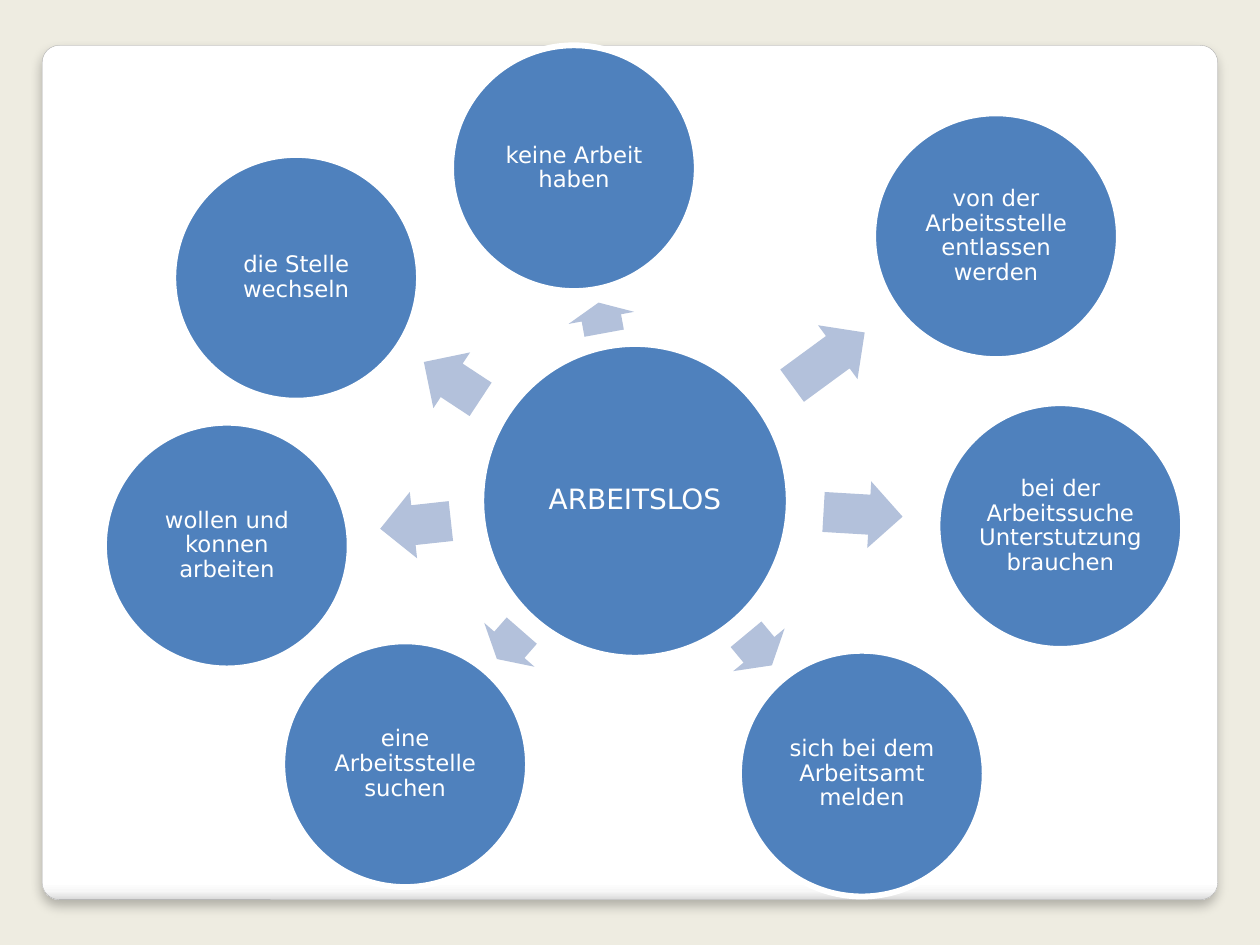
"""Build a slide with a hub circle and seven radiating idea circles."""
from dataclasses import dataclass
from math import atan2, cos, degrees, hypot, sin

from lxml import etree
from pptx import Presentation
from pptx.dml.color import RGBColor
from pptx.enum.shapes import MSO_SHAPE
from pptx.enum.text import MSO_ANCHOR, PP_ALIGN
from pptx.oxml.ns import qn
from pptx.util import Inches, Pt

CIRCLE, ARROW, CARD = MSO_SHAPE.OVAL, MSO_SHAPE.RIGHT_ARROW, MSO_SHAPE.ROUNDED_RECTANGLE
MIDDLE, CENTER = MSO_ANCHOR.MIDDLE, PP_ALIGN.CENTER
WIDTH, HEIGHT = Inches(10), Inches(7.5)
COLUMNS, ROWS = 100, 75
BLANK = 6


@dataclass(frozen=True)
class Theme:
    """Colours, type sizes and line widths of the slide."""
    page: str = "EEECE1"
    circle: str = "4F81BD"
    arrow: str = "B3C1DB"
    white: str = "FFFFFF"
    card_line: str = "A4A4A4"
    shadow: str = "000000"
    card_stops: tuple = ((0, "FFFFFF"), (98, "FFFFFF"), (99, "F7F7F7"), (100, "DADADA"))
    font: str = "DejaVu Sans"
    hub_size: float = 16
    idea_size: float = 13
    ring: float = 3.35
    card_ring: float = 0.16


THEME = Theme()
HUB = (50.4, 39.75)
HUB_SIZE = (24.4, 24.9)
IDEA_SIZE = (19.5, 19.5)
ARROW_WIDTH = 5.3
ARROW_SHARE = 0.53
IDEAS = (
    ("keine Arbeit haben", (45.55, 13.35)),
    ("von der Arbeitsstelle entlassen werden", (79.05, 18.75)),
    ("bei der Arbeitssuche Unterstutzung brauchen", (84.15, 41.75)),
    ("sich bei dem Arbeitsamt melden", (68.4, 61.4)),
    ("eine Arbeitsstelle suchen", (32.15, 60.65)),
    ("wollen und konnen arbeiten", (18, 43.3)),
    ("die Stelle wechseln", (23.5, 22.05)),
)


def apply(target, values):
    """Set every attribute named in values on the target."""
    for name, value in values.items():
        setattr(target, name, value)


def add_block(page, kind, center, size, fill=None, line=None, ring=0):
    """Add a preset shape centred on a grid position."""
    (x, y), (width, height) = center, size
    column, row = WIDTH / COLUMNS, HEIGHT / ROWS
    box = page.shapes.add_shape(
        kind, round((x - width / 2) * column), round((y - height / 2) * row),
        round(width * column), round(height * row))
    box.shadow.inherit = False
    if fill:
        box.fill.solid()
        box.fill.fore_color.rgb = RGBColor.from_string(fill)
    if line:
        box.line.color.rgb = RGBColor.from_string(line)
        box.line.width = Pt(ring)
    else:
        box.line.fill.background()
    return box


def add_color(parent, color):
    """Append an RGB colour element to the parent."""
    return etree.SubElement(parent, qn("a:srgbClr"), val=color)


def add_card(page):
    """Add the white rounded panel with its gradient edge and soft shadow."""
    card = add_block(page, CARD, (50, 37.5), (93.3, 67.8),
                     line=THEME.card_line, ring=THEME.card_ring)
    card.adjustments[0] = 0.02
    card.fill.gradient()
    card.fill.gradient_angle = 270
    properties = card._element.spPr
    stops = properties.find(qn("a:gradFill")).find(qn("a:gsLst"))
    for stop in list(stops):
        stops.remove(stop)
    for percent, color in THEME.card_stops:
        add_color(etree.SubElement(stops, qn("a:gs"), pos=str(percent * 1000)), color)
    shadow = etree.SubElement(
        properties.find(qn("a:effectLst")), qn("a:outerShdw"), blurRad=str(Pt(6)),
        dist=str(Pt(4)), dir="5400000", algn="t", rotWithShape="0")
    etree.SubElement(add_color(shadow, THEME.shadow), qn("a:alpha"), val="25000")


def add_circle(page, text, center, size, type_size):
    """Add a white-ringed circle with centred text."""
    circle = add_block(page, CIRCLE, center, size, THEME.circle, THEME.white, THEME.ring)
    frame = circle.text_frame
    sides = ("left", "top", "right", "bottom")
    apply(frame, {f"margin_{side}": Inches(0.02) for side in sides})
    apply(frame, {"word_wrap": True, "vertical_anchor": MIDDLE})
    para = frame.paragraphs[0]
    apply(para, {"alignment": CENTER, "line_spacing": 0.9})
    span = para.add_run()
    span.text = text
    apply(span.font, {"name": THEME.font, "size": Pt(type_size)})
    span.font.color.rgb = RGBColor.from_string(THEME.white)


def add_arrow(page, target):
    """Add an arrow in the middle of the gap between the hub and an idea."""
    across, down = target[0] - HUB[0], target[1] - HUB[1]
    angle = atan2(down, across)
    start = hypot(HUB_SIZE[0] * cos(angle), HUB_SIZE[1] * sin(angle)) / 2
    gap = hypot(across, down) - start - IDEA_SIZE[0] / 2
    reach = start + gap / 2
    center = (HUB[0] + reach * cos(angle), HUB[1] + reach * sin(angle))
    length = gap * ARROW_SHARE
    arrow = add_block(page, ARROW, center, (length, ARROW_WIDTH), THEME.arrow)
    arrow.adjustments[0] = 0.6
    arrow.adjustments[1] = 0.5
    arrow.rotation = degrees(angle) % 360


def main():
    """Build the slide and save it."""
    deck = Presentation()
    apply(deck, {"slide_width": WIDTH, "slide_height": HEIGHT})
    page = deck.slides.add_slide(deck.slide_layouts[BLANK])
    page.background.fill.solid()
    page.background.fill.fore_color.rgb = RGBColor.from_string(THEME.page)
    add_card(page)
    add_circle(page, "ARBEITSLOS", HUB, HUB_SIZE, THEME.hub_size)
    for text, center in IDEAS:
        add_arrow(page, center)
        add_circle(page, text, center, IDEA_SIZE, THEME.idea_size)
    deck.save("out.pptx")


if __name__ == "__main__":
    main()
